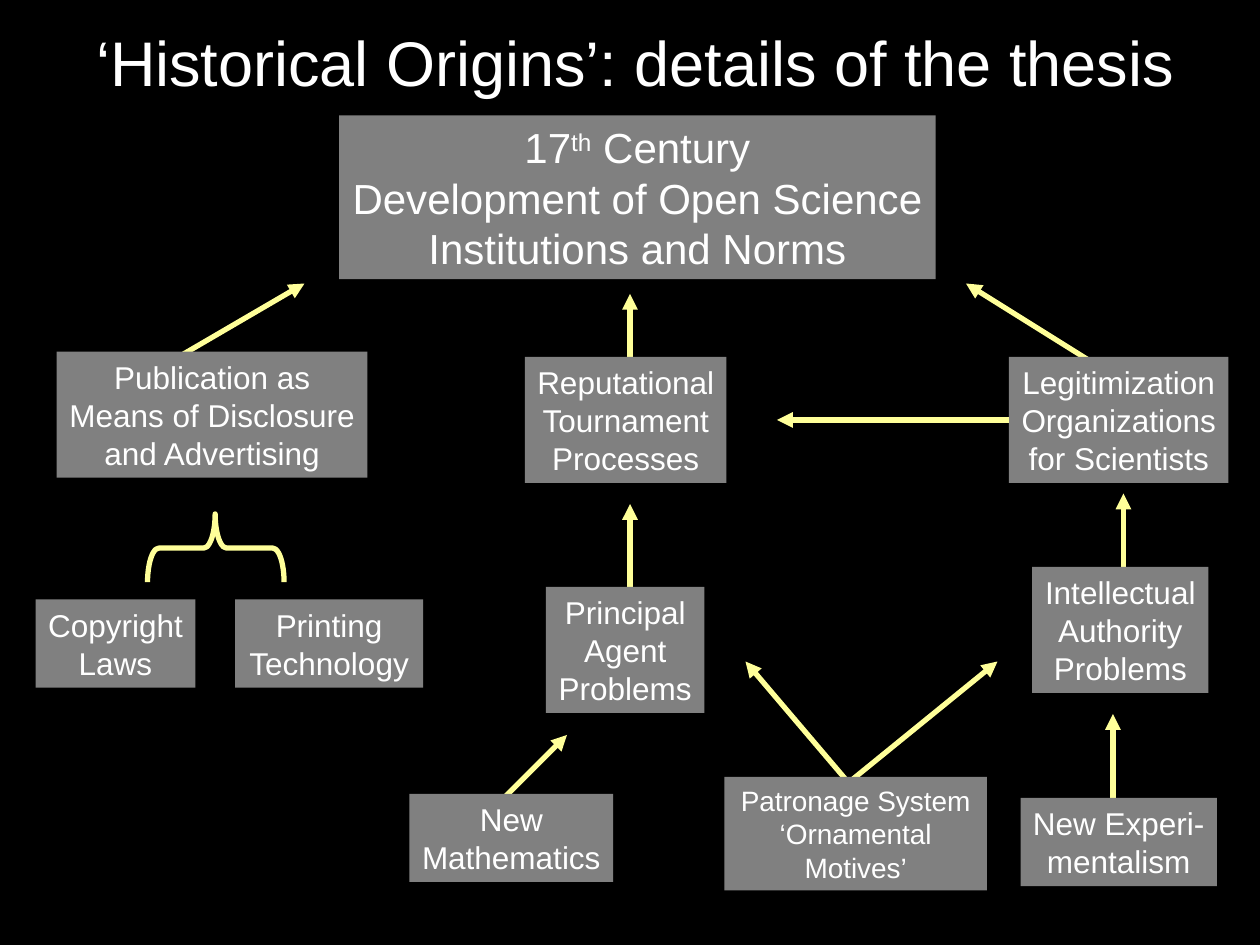
from pptx import Presentation
from pptx import util as u
from pptx.dml.color import RGBColor
from pptx.enum import shapes, text
from pptx.oxml import ns
from lxml import etree

COLORS = {"back": "000000", "box": "808080", "text": "FFFFFF", "line": "FFFF99"}
COLS, ROWS = 120, 90


class Diagram:
    """Style and current slide; lengths are grid columns and rows."""
    font = "Arial"
    weight = u.Pt(3)

    def __init__(self, prs):
        self.cell_w = prs.slide_width / COLS
        self.cell_h = prs.slide_height / ROWS
        self.s = prs.slides.add_slide(prs.slide_layouts[6])
        self.paint(self.s.background.fill, "back")

    def grid(self, *lengths):
        cells = (self.cell_w, self.cell_h)
        return [round(n * cells[i % 2]) for i, n in enumerate(lengths)]

    def paint(self, fill, name):
        fill.solid()
        fill.fore_color.rgb = RGBColor.from_string(COLORS[name])

    def stroke(self, sp):
        self.paint(sp.line.fill, "line")
        sp.line.width = self.weight

    def label(self, sp, words, size, wrap):
        """Fill with centred text; ^ marks the start and end of a superscript."""
        tf = sp.text_frame
        tf.word_wrap = wrap
        for i, line in enumerate(words.split("\n")):
            p = tf.paragraphs[0] if i == 0 else tf.add_paragraph()
            p.alignment = text.PP_ALIGN.CENTER
            for j, part in enumerate(line.split("^")):
                r = p.add_run()
                r.text = part
                r.font.name, r.font.size = self.font, u.Pt(size)
                self.paint(r.font.fill, "text")
                if j % 2:
                    r.font._element.set("baseline", "30000")

    def title(self, x, y, w, h, words, size=36):
        sp = self.s.shapes.add_textbox(*self.grid(x, y, w, h))
        sp.text_frame.margin_top = u.Inches(0.1)
        self.label(sp, words, size, True)

    def box(self, x, y, w, words, size=18, lines=None):
        """Box as high as its lines; a given line count means the text wraps."""
        count = lines or words.count("\n") + 1
        h = count * size * 0.2 + 1.2
        sp = self.s.shapes.add_shape(shapes.MSO_SHAPE.RECTANGLE, *self.grid(x, y, w, h))
        sp.shadow.inherit = False
        self.paint(sp.fill, "box")
        sp.line.fill.background()
        self.label(sp, words, size, lines is not None)
        return sp

    def brace(self, x, y, w, h):
        sp = self.s.shapes.add_shape(shapes.MSO_SHAPE.LEFT_BRACE, *self.grid(x, y, w, h))
        sp.rotation = 90
        sp.adjustments[0], sp.adjustments[1] = 0.167, 0.505
        sp.shadow.inherit = False
        sp.fill.background()
        self.stroke(sp)

    def arrow(self, x1, y1, x2, y2, start=None, side=1):
        c = self.s.shapes.add_connector(shapes.MSO_CONNECTOR.STRAIGHT,
                                        *self.grid(x1, y1, x2, y2))
        if start is not None:
            c.begin_connect(start, side)
        self.stroke(c)
        etree.SubElement(c.line._get_or_add_ln(), ns.qn("a:tailEnd"), type="triangle")
        etree.SubElement(c._element.spPr, ns.qn("a:effectLst"))


def main():
    prs = Presentation()
    prs.slide_width, prs.slide_height = u.Inches(10), u.Inches(7.5)
    d = Diagram(prs)

    # Title and outcome
    d.title(3, 1, 115, 15, "‘Historical Origins’: details of the thesis")
    d.box(32.3, 11, 56.8,
          "17^th^ Century\nDevelopment of Open Science\nInstitutions and Norms", 24)

    # Arrows that start behind their boxes
    for ends in [
        (17, 34, 29, 27), (60, 35, 60, 28), (104, 34.5, 92, 27),
        (60, 57, 60, 48), (107, 56, 107, 47), (106, 78, 106, 68),
        (80, 75.2, 95, 63), (82.9, 77, 71, 63), (48, 76, 54, 70),
    ]:
        d.arrow(*ends)

    # Publication and its two sources
    d.brace(17.3, 45.7, 6.5, 13)
    d.box(5.4, 33.5, 29.6, "Publication as\nMeans of Disclosure\nand Advertising")
    d.box(3.4, 57.1, 15.2, "Copyright\nLaws")
    d.box(22.4, 57.1, 17.9, "Printing\nTechnology")

    # Reputation
    d.box(50, 34, 19.2, "Reputational\nTournament\nProcesses")
    d.box(52, 55.9, 15.1, "Principal\nAgent\nProblems")
    d.box(39, 75.6, 19.4, "New\nMathematics")
    d.box(69, 74, 25, "Patronage System\n‘Ornamental Motives’", 16, lines=3)

    # Legitimization
    legitimization = d.box(96.1, 34, 20.9, "Legitimization\nOrganizations\nfor Scientists")
    d.box(98.3, 54, 16.8, "Intellectual\nAuthority\nProblems")
    d.box(97.2, 76, 18.7, "New Experi-\nmentalism")
    d.arrow(96, 40, 74, 40, legitimization)

    prs.save("out.pptx")


if __name__ == "__main__":
    main()
